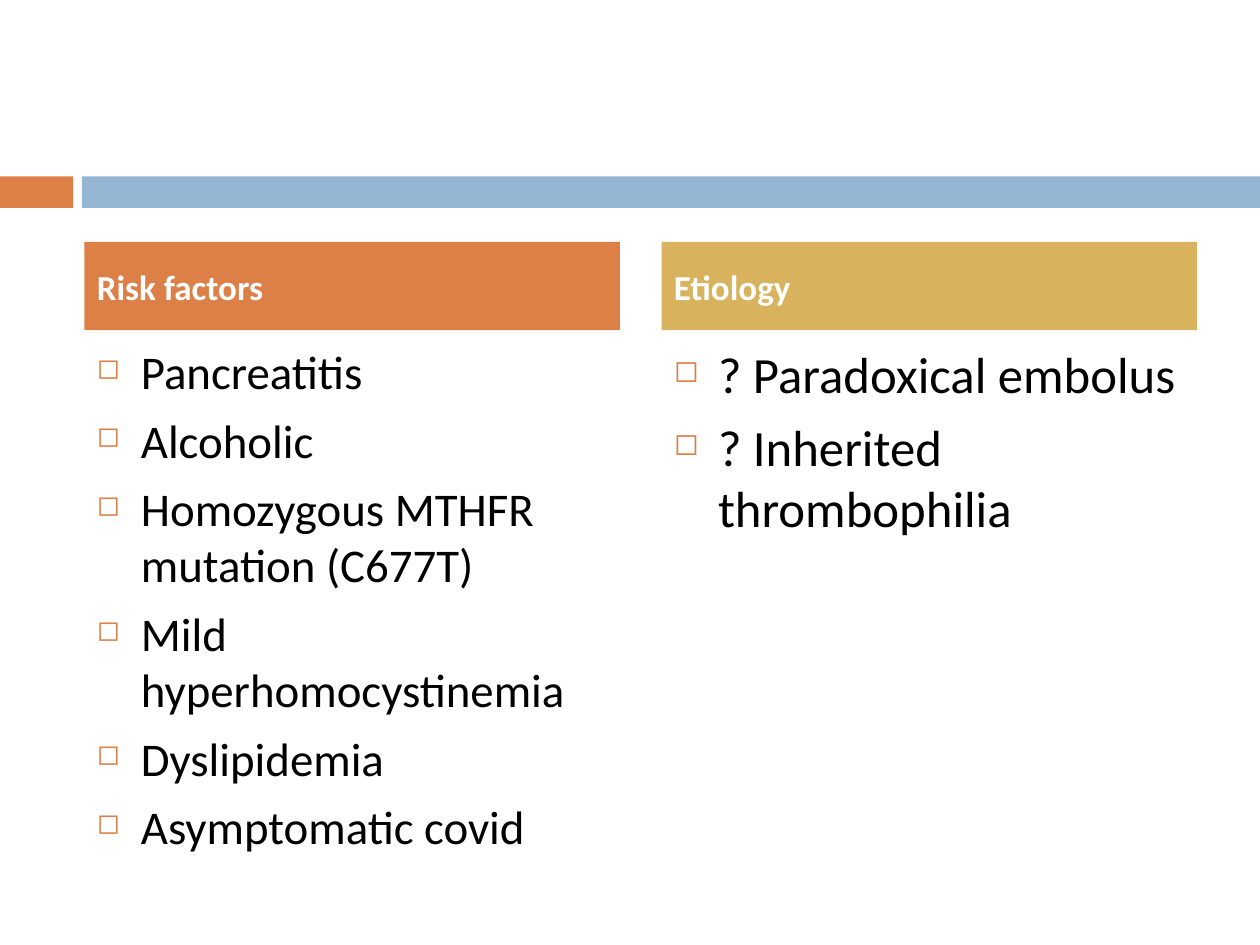
from lxml.etree import SubElement
from pptx import Presentation
from pptx.dml.color import RGBColor
from pptx.enum.shapes import MSO_SHAPE
from pptx.enum.text import MSO_ANCHOR, PP_ALIGN
from pptx.oxml.ns import qn
from pptx.util import Inches, Pt

ORANGE = RGBColor(0xDD, 0x80, 0x47)
BLUE = RGBColor(0x94, 0xB6, 0xD2)
GOLD = RGBColor(0xD8, 0xB2, 0x5C)
WHITE = RGBColor(0xFF, 0xFF, 0xFF)
BLACK = RGBColor(0x00, 0x00, 0x00)

# Grid, in inches
SLIDE_WIDTH, SLIDE_HEIGHT = 10, 7.5
BAND_TOP, BAND_HEIGHT = 1.4, 0.25
TAB_WIDTH, BAND_LEFT = 0.58, 0.65
COLUMN_LEFT, COLUMN_STEP, COLUMN_WIDTH = 0.67, 4.58, 4.25
HEADING_TOP, HEADING_HEIGHT = 1.92, 0.7
LIST_TOP, LIST_HEIGHT = 2.67, 3.92
BULLET_INDENT = 0.35

# Heading, heading fill, list size, list items
COLUMNS = [
    ("Risk factors", ORANGE, 26.8, [
        "Pancreatitis",
        "Alcoholic",
        "Homozygous MTHFR mutation (C677T)",
        "Mild hyperhomocystinemia",
        "Dyslipidemia",
        "Asymptomatic covid",
    ]),
    ("Etiology", GOLD, 29, [
        "? Paradoxical embolus",
        "? Inherited thrombophilia",
    ]),
]


def add_block(slide, left, top, width, height, color):
    shape = slide.shapes.add_shape(
        MSO_SHAPE.RECTANGLE, *map(Inches, (left, top, width, height)))
    shape.shadow.inherit = False
    shape.fill.solid()
    shape.fill.fore_color.rgb = color
    shape.line.fill.background()
    return shape


def style_paragraph(paragraph, text, size, color, bold=False):
    paragraph.text = text
    paragraph.alignment = PP_ALIGN.LEFT
    paragraph.space_before = Pt(7)
    font = paragraph.font
    font.name, font.size, font.bold = "Calibri", Pt(size), bold
    font.color.rgb = color


def add_bullet(paragraph):
    properties = paragraph._p.get_or_add_pPr()
    properties.set("marL", str(Inches(BULLET_INDENT)))
    properties.set("indent", str(-Inches(BULLET_INDENT)))
    # Bullet elements come before the default run properties
    bullet_color = SubElement(properties, qn("a:buClr"))
    SubElement(bullet_color, qn("a:srgbClr"), val=str(ORANGE))
    SubElement(properties, qn("a:buSzPct"), val="60000")
    SubElement(properties, qn("a:buChar"), char="◻")
    properties.append(properties.find(qn("a:defRPr")))


def add_heading(slide, left, text, color):
    shape = add_block(slide, left, HEADING_TOP, COLUMN_WIDTH, HEADING_HEIGHT, color)
    frame = shape.text_frame
    frame.vertical_anchor = MSO_ANCHOR.MIDDLE
    style_paragraph(frame.paragraphs[0], text, 20, WHITE, bold=True)


def add_list(slide, left, items, size):
    box = slide.shapes.add_textbox(
        *map(Inches, (left, LIST_TOP, COLUMN_WIDTH, LIST_HEIGHT)))
    frame = box.text_frame
    frame.word_wrap = True
    for index, item in enumerate(items):
        paragraph = frame.add_paragraph() if index else frame.paragraphs[0]
        style_paragraph(paragraph, item, size, BLACK)
        add_bullet(paragraph)


def main():
    presentation = Presentation()
    presentation.slide_width = Inches(SLIDE_WIDTH)
    presentation.slide_height = Inches(SLIDE_HEIGHT)
    slide = presentation.slides.add_slide(presentation.slide_layouts[6])

    # Band across the slide
    add_block(slide, 0, BAND_TOP, TAB_WIDTH, BAND_HEIGHT, ORANGE)
    add_block(slide, BAND_LEFT, BAND_TOP, SLIDE_WIDTH - BAND_LEFT, BAND_HEIGHT, BLUE)

    # Two columns, each a heading over a list
    for number, (heading, color, size, items) in enumerate(COLUMNS):
        left = COLUMN_LEFT + number * COLUMN_STEP
        add_heading(slide, left, heading, color)
        add_list(slide, left, items, size)

    presentation.save("out.pptx")


if __name__ == "__main__":
    main()
